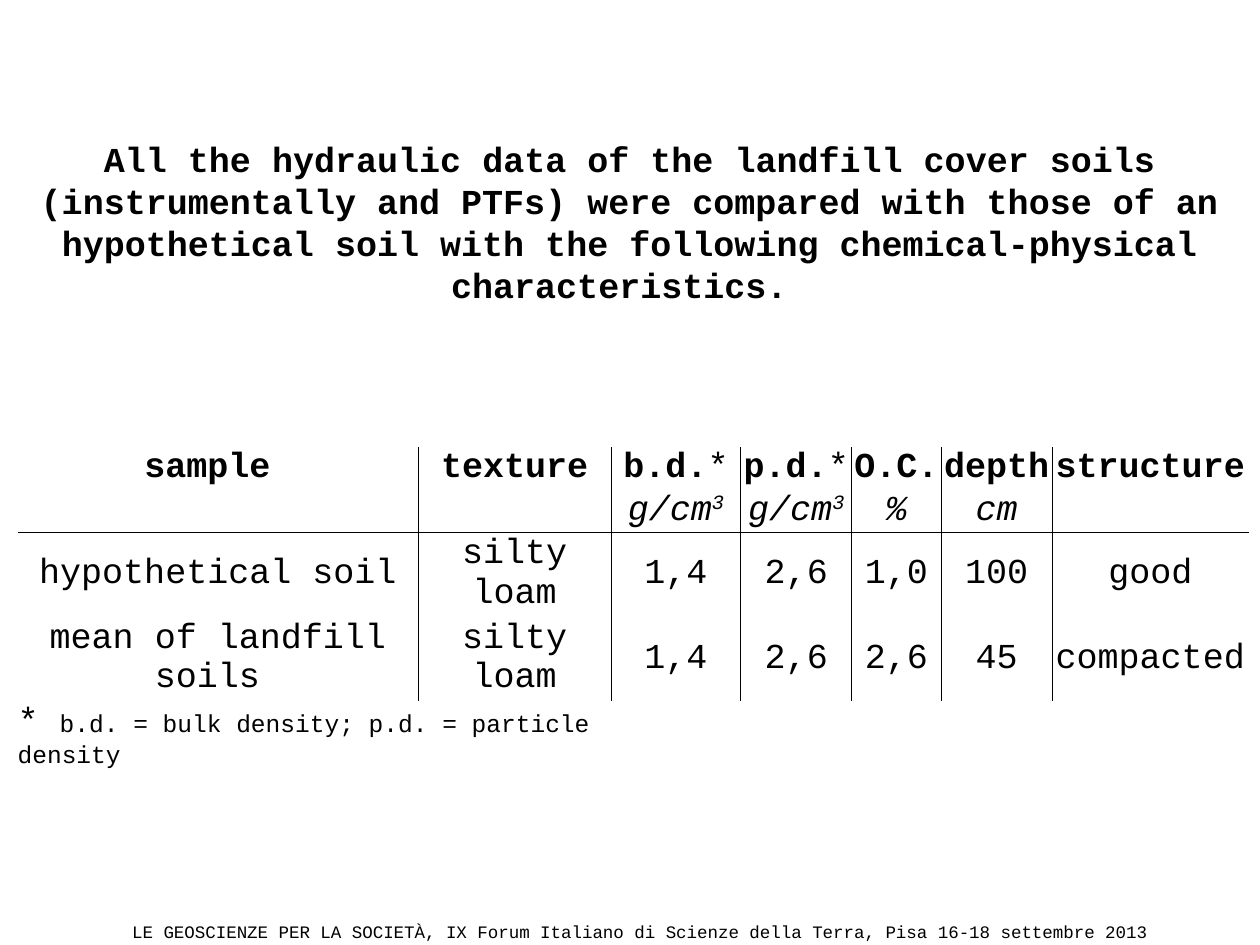
import pptx
import pptx.util
import pptx.dml.color
import pptx.enum.text
import pptx.oxml
import pptx.oxml.ns

Pt = pptx.util.Pt
Align = pptx.enum.text.PP_ALIGN
Anchor = pptx.enum.text.MSO_ANCHOR
COLORS = {"ink": "000000", "paper": "FFFFFF"}
NS = pptx.oxml.ns.nsdecls("a")


class Deck:
    face = "Courier New"
    size = 20
    cols, rows = 100, 75

    def __init__(self):
        self.prs = pptx.Presentation()
        self.prs.slide_width = pptx.util.Inches(10)
        self.prs.slide_height = pptx.util.Inches(7.5)
        self.slide = self.prs.slides.add_slide(self.prs.slide_layouts[5])

    def x(self, n):
        return round(self.prs.slide_width * n / self.cols)

    def y(self, n):
        return round(self.prs.slide_height * n / self.rows)

    def box(self, left, top, width, height):
        return self.x(left), self.y(top), self.x(width), self.y(height)

    def color(self, name):
        return pptx.dml.color.RGBColor.from_string(COLORS[name])

    def text(self, frame, runs, align=Align.CENTER):
        para = frame.paragraphs[0]
        para.alignment = align
        for words, style, size in runs:
            run = para.add_run()
            run.text = words
            font = run.font
            font.name, font.size = self.face, Pt(size)
            font.bold, font.italic = "b" in style, "i" in style
            font.color.rgb = self.color("ink")
            if "s" in style:
                run._r.get_or_add_rPr().set("baseline", "30000")
        return para

    def title(self, words, *place):
        shape = self.slide.shapes.title
        shape.left, shape.top, shape.width, shape.height = self.box(*place)
        frame = shape.text_frame
        frame.word_wrap = True
        frame.auto_size = pptx.enum.text.MSO_AUTO_SIZE.NONE
        frame.vertical_anchor = Anchor.TOP
        para = self.text(frame, [(words, "b", self.size)])
        para.line_spacing = Pt(24)

    def label(self, words, size, *place):
        frame = self.slide.shapes.add_textbox(*self.box(*place)).text_frame
        frame.word_wrap = True
        frame.margin_left = frame.margin_right = Pt(1.5)
        frame.margin_top = frame.margin_bottom = Pt(0.75)
        self.text(frame, [(words, "", size)])

    def edge(self, cell, side, drawn):
        paint = "<a:noFill/>"
        if drawn:
            paint = f'<a:solidFill><a:srgbClr val="{COLORS["ink"]}"/></a:solidFill>'
        line = f'<a:ln{side} {NS} w="{Pt(0.5)}">{paint}</a:ln{side}>'
        cell._tc.get_or_add_tcPr().append(pptx.oxml.parse_xml(line))

    def table(self, left, top, widths, heights, data, note):
        last, end = len(heights) - 1, len(widths) - 1
        place = self.box(left, top, sum(widths), sum(heights))
        table = self.slide.shapes.add_table(last + 1, end + 1, *place).table
        table.first_row = table.horz_banding = False
        for col, width in zip(table.columns, widths):
            col.width = self.x(width)
        for row, height in zip(table.rows, heights):
            row.height = self.y(height)
        for r in range(last + 1):
            for c in range(end + 1):
                cell = table.cell(r, c)
                body = r < last
                self.edge(cell, "L", body and c > 0)
                self.edge(cell, "R", body and c < end)
                self.edge(cell, "T", r == 2)
                self.edge(cell, "B", r == 1)
                cell.fill.solid()
                cell.fill.fore_color.rgb = self.color("paper")
                cell.margin_left = cell.margin_right = 0
                cell.margin_top = cell.margin_bottom = 0
                cell.vertical_anchor = Anchor.MIDDLE
                if body:
                    runs = [(*part, self.size) for part in data[r][c]]
                    self.text(cell.text_frame, runs)
        foot = table.cell(last, 0)
        foot.merge(table.cell(last, 1))
        self.text(foot.text_frame, note, Align.LEFT)


def plain(*words):
    return [[(word, "")] for word in words]


def main():
    deck = Deck()
    deck.label(
        "LE GEOSCIENZE PER LA SOCIETÀ, IX Forum Italiano di Scienze della Terra, "
        "Pisa 16-18 settembre 2013", 10, 6, 73, 89.5, 1.9)

    names = ["sample ", "texture", "b.d.", "p.d.", "O.C.", "depth", "structure"]
    head = [[(name, "b")] for name in names]
    for part in head[2:4]:
        part.append(("*", ""))
    dense = [("g/cm", "i"), ("3", "is")]
    units = [[], [], dense, dense, [("%", "i")], [("cm", "i")], []]
    data = [
        head,
        units,
        plain("hypothetical soil", "silty loam", "1,4", "2,6", "1,0", "100", "good"),
        plain("mean of landfill soils ", "silty loam", "1,4", "2,6", "2,6", "45",
              "compacted"),
    ]
    note = [("* ", "", 20), ("b.d. = bulk density; p.d. = particle density", "", 14)]
    widths = [31.8, 15.3, 10.3, 8.8, 7.1, 8.8, 15.6]
    heights = [3.3, 3.4, 6.7, 6.7, 5.6]
    deck.table(1.4, 35.5, widths, heights, data, note)

    deck.title(
        "All the hydraulic data of the landfill cover soils (instrumentally and PTFs) "
        "were compared with those of an hypothetical soil with the following "
        "chemical-physical characteristics. ", 0, 10.4, 100, 14.5)
    deck.prs.save("out.pptx")


if __name__ == "__main__":
    main()
